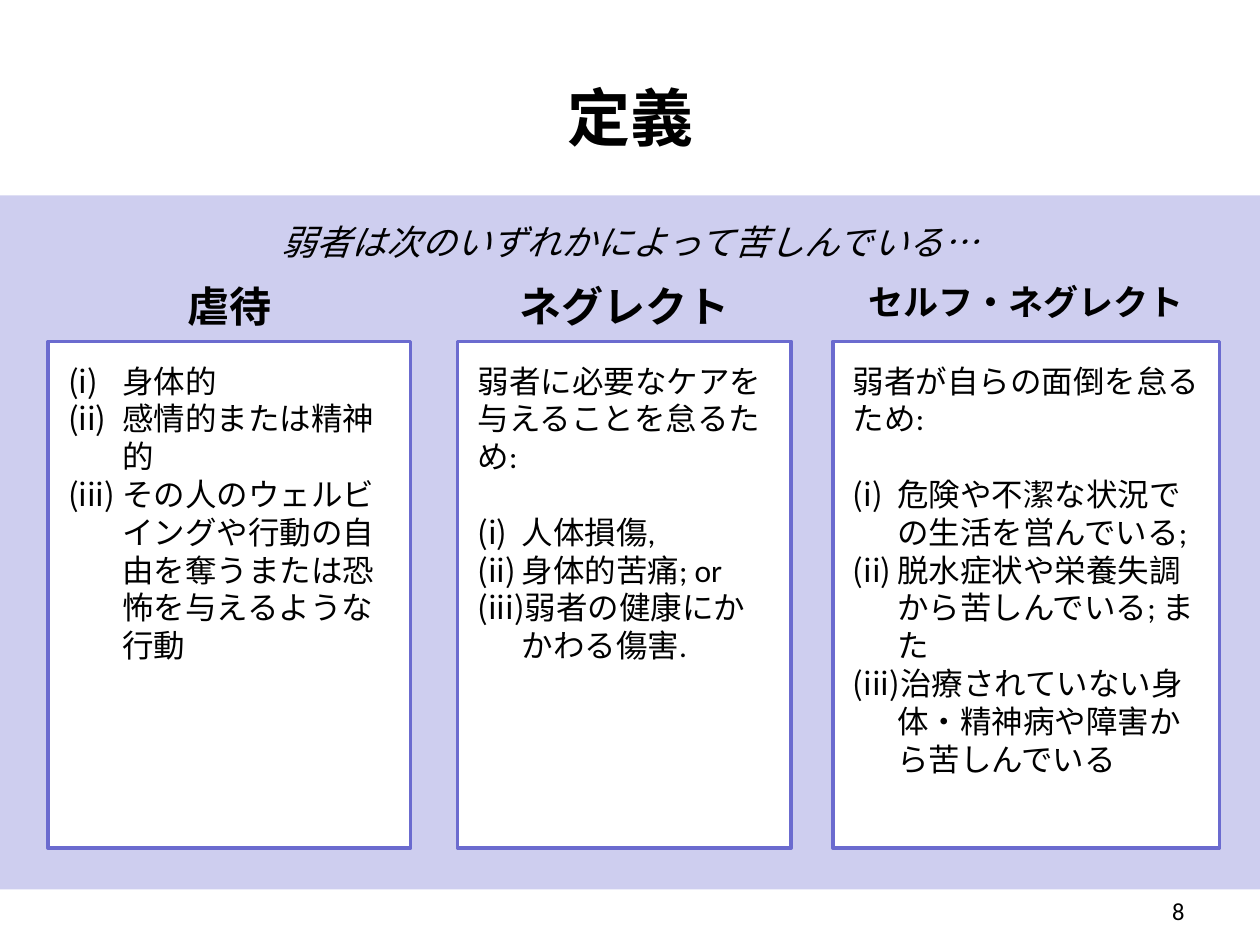
from dataclasses import dataclass

import lxml.etree
import pptx
import pptx.dml.color
import pptx.enum.shapes
import pptx.enum.text
import pptx.oxml.ns
import pptx.shapes.autoshape
import pptx.slide
import pptx.text.text
import pptx.util

FONT = "Calibri"
COLORS = {"text": "000000", "band": "CECEEF", "card": "FFFFFF", "border": "6B6BCF"}

# The slide is a grid of 100 columns by 75 rows.
CELL = pptx.util.Inches(0.1)
COLUMNS, ROWS = 100, 75
BAND_TOP, BAND_BOTTOM = 15.5, 70.6
HEADING_TOP, CARD_TOP, CARD_HEIGHT = 21.8, 27.1, 40.2
BODY_SIZE = 18
BLANK_LINE = 21.6  # points, one line of body text

Alignment = pptx.enum.text.PP_ALIGN


@dataclass(frozen=True)
class Box:
    left: float
    top: float
    width: float
    height: float

    def lengths(self) -> tuple[int, ...]:
        cells = (self.left, self.top, self.width, self.height)
        return tuple(round(cell * CELL) for cell in cells)


@dataclass(frozen=True)
class Definition:
    heading: str
    heading_size: int
    heading_height: float
    left: float
    width: float
    intro: str
    items: tuple[str, ...]
    indent: float


DEFINITIONS = (
    Definition("虐待", 24, 5, 3.8, 28.8, "", (
        "身体的",
        "感情的または精神的",
        "その人のウェルビイングや行動の自由を奪うまたは恐怖を与えるような行動",
    ), 4.3),
    Definition("ネグレクト", 24, 5, 36.3, 26.5, "弱者に必要なケアを与えることを怠るため:", (
        "人体損傷,",
        "身体的苦痛; or",
        "弱者の健康にかかわる傷害.",
    ), 3.5),
    Definition("セルフ・ネグレクト", 20, 4.4, 66.1, 30.7, "弱者が自らの面倒を怠るため:", (
        "危険や不潔な状況での生活を営んでいる;",
        "脱水症状や栄養失調から苦しんでいる; また",
        "治療されていない身体・精神病や障害から苦しんでいる",
    ), 3.5),
)


def color(name: str) -> pptx.dml.color.RGBColor:
    return pptx.dml.color.RGBColor.from_string(COLORS[name])


def format_paragraph(
    paragraph: pptx.text.text._Paragraph,
    size: int,
    alignment: Alignment = Alignment.LEFT,
    bold: bool = False,
    italic: bool = False,
) -> None:
    paragraph.alignment = alignment
    font = paragraph.font
    font.name, font.size = FONT, pptx.util.Pt(size)
    font.bold, font.italic = bold, italic
    font.color.rgb = color("text")


def add_label(
    slide: pptx.slide.Slide, box: Box, text: str, size: int,
    alignment: Alignment = Alignment.CENTER, bold: bool = False, italic: bool = False,
) -> pptx.text.text._Paragraph:
    frame = slide.shapes.add_textbox(*box.lengths()).text_frame
    frame.word_wrap = True
    paragraph = frame.paragraphs[0]
    paragraph.text = text
    format_paragraph(paragraph, size, alignment, bold, italic)
    return paragraph


def add_rectangle(
    slide: pptx.slide.Slide, box: Box, fill: str, border: str = ""
) -> pptx.shapes.autoshape.Shape:
    shape = slide.shapes.add_shape(
        pptx.enum.shapes.MSO_SHAPE.RECTANGLE, *box.lengths())
    shape.shadow.inherit = False
    shape.fill.solid()
    shape.fill.fore_color.rgb = color(fill)
    if border:
        shape.line.color.rgb = color(border)
        shape.line.width = pptx.util.Pt(2)
    else:
        shape.line.fill.background()
    return shape


def number_paragraph(paragraph: pptx.text.text._Paragraph, indent: float) -> None:
    """Give the paragraph a hanging indent and (i), (ii), (iii) numbering."""
    properties = paragraph._p.get_or_add_pPr()
    properties.set("marL", str(round(indent * CELL)))
    properties.set("indent", str(-round(indent * CELL)))
    lxml.etree.SubElement(
        properties, pptx.oxml.ns.qn("a:buAutoNum"), type="romanLcParenBoth")


def add_definition(slide: pptx.slide.Slide, definition: Definition) -> None:
    left, width = definition.left, definition.width
    add_label(slide, Box(left, HEADING_TOP, width, definition.heading_height),
              definition.heading, definition.heading_size, bold=True)
    card = add_rectangle(
        slide, Box(left, CARD_TOP, width, CARD_HEIGHT), "card", "border")
    frame = card.text_frame
    frame.word_wrap = True
    frame.vertical_anchor = pptx.enum.text.MSO_ANCHOR.TOP
    frame.margin_left = frame.margin_right = round(1.6 * CELL)
    frame.margin_top = frame.margin_bottom = round(1.6 * CELL)

    paragraph = frame.paragraphs[0]
    if definition.intro:
        paragraph.text = definition.intro
        format_paragraph(paragraph, BODY_SIZE)
    for index, item in enumerate(definition.items):
        if index or definition.intro:
            paragraph = frame.add_paragraph()
        paragraph.text = item
        number_paragraph(paragraph, definition.indent)
        if definition.intro and index == 0:
            paragraph.space_before = pptx.util.Pt(BLANK_LINE)
        format_paragraph(paragraph, BODY_SIZE)


def add_title(slide: pptx.slide.Slide, text: str) -> None:
    title = slide.shapes.title
    title.left, title.top, title.width, title.height = Box(5, 3, 90, 12.5).lengths()
    title.text_frame.vertical_anchor = pptx.enum.text.MSO_ANCHOR.MIDDLE
    title.text_frame.text = text
    format_paragraph(title.text_frame.paragraphs[0], 36, Alignment.CENTER, bold=True)


def main() -> None:
    presentation = pptx.Presentation()
    presentation.slide_width = COLUMNS * CELL
    presentation.slide_height = ROWS * CELL
    slide = presentation.slides.add_slide(presentation.slide_layouts[5])

    add_title(slide, "定義")
    add_label(slide, Box(71.7, BAND_BOTTOM, 23.3, 2.9), "8", 14, Alignment.RIGHT)
    add_rectangle(slide, Box(0, BAND_TOP, COLUMNS, BAND_BOTTOM - BAND_TOP), "band")
    add_label(slide, Box(0, 17, COLUMNS, 4.4),
              "弱者は次のいずれかによって苦しんでいる…", 20, italic=True)
    for definition in DEFINITIONS:
        add_definition(slide, definition)

    presentation.save("out.pptx")


if __name__ == "__main__":
    main()
